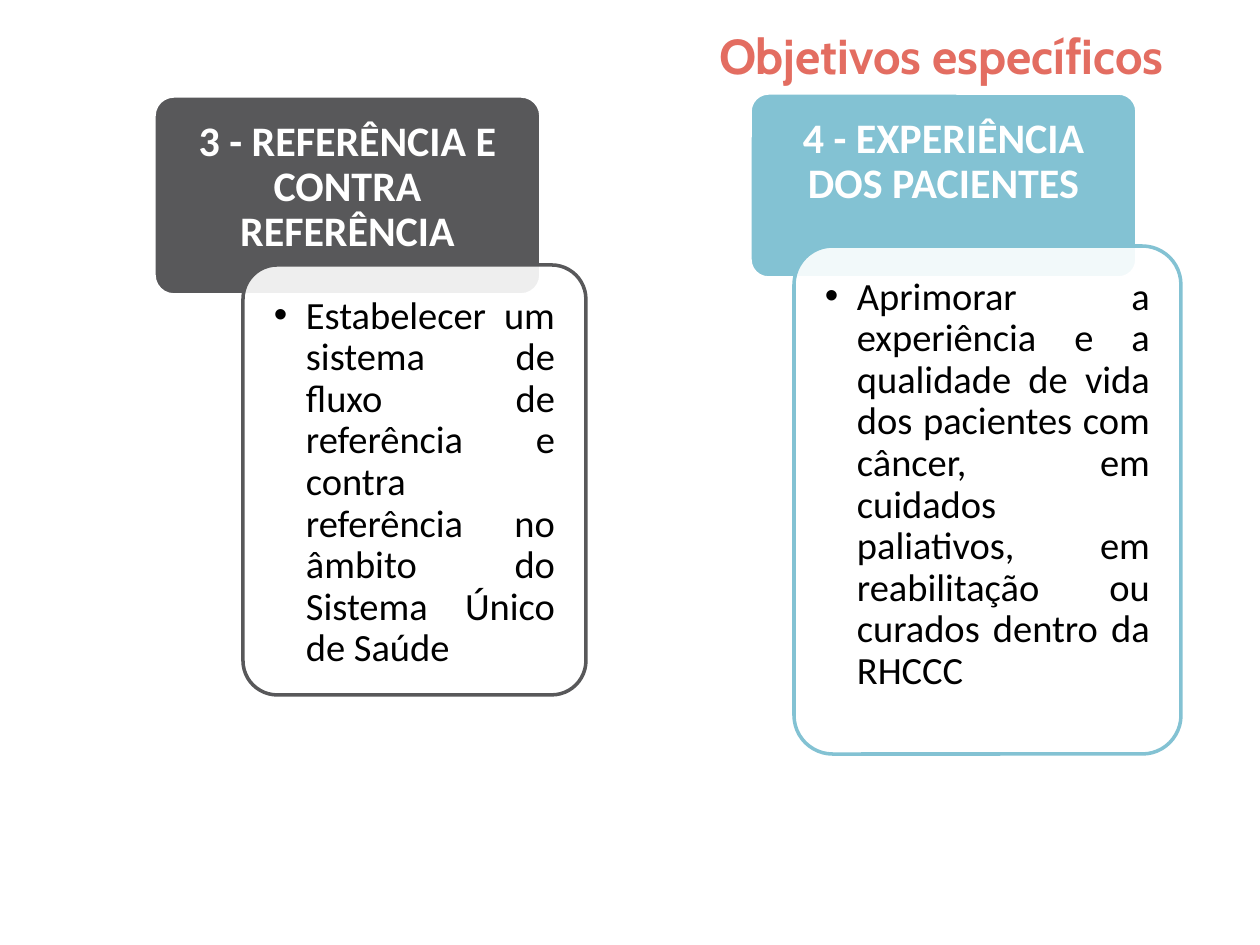
from lxml import etree
from pptx import Presentation
from pptx import util as u
from pptx.dml.color import RGBColor
from pptx.enum import shapes, text
from pptx.oxml.ns import qn

PX = 914400 / 126
HEX = {"coral": "E36D61", "gray": "58585A", "blue": "83C2D3",
       "white": "FFFFFF", "black": "000000"}
TITLE = ("Objetivos específicos", (94, -24, 1082, 158))
# boxes are left, top, width, height in px; "cap" is the height of the heading text
CARDS = [
    {"color": "gray", "head": "3 - REFERÊNCIA E CONTRA REFERÊNCIA",
     "top": (154, 96, 387, 199), "cap": 134, "low": (243, 265, 343, 430),
     "body": "Estabelecer um sistema de fluxo de referência e contra "
             "referência no âmbito do Sistema Único de Saúde"},
    {"color": "blue", "head": "4 - EXPERIÊNCIA DOS PACIENTES",
     "top": (750, 93, 387, 185), "cap": 123, "low": (794, 246, 387, 508),
     "body": "Aprimorar a experiência e a qualidade de vida dos pacientes "
             "com câncer, em cuidados paliativos, em reabilitação ou "
             "curados dentro da RHCCC"},
]
GAP = 10
BULLET = 32
FONTS = {
    "title": {"name": "Cabin", "size": u.Pt(28), "bold": True},
    "head": {"name": "Calibri", "size": u.Pt(24), "bold": True},
    "body": {"name": "Calibri", "size": u.Pt(22), "bold": False},
}
INSETS = {"head": (24, 24, 24, 12), "body": (21, 21, 21, 21)}
SIDES = ("margin_left", "margin_top", "margin_right", "margin_bottom")


def emu(*vals):
    return [u.Emu(round(v * PX)) for v in vals]


def rgb(name):
    return RGBColor.from_string(HEX[name])


def style(para, kind, color):
    for key, val in FONTS[kind].items():
        setattr(para.font, key, val)
    para.font.color.rgb = rgb(color)


def panel(slide, box, fill, line, alpha=None):
    """Rounded box; alpha is its opacity in percent."""
    shape = slide.shapes.add_shape(
        shapes.MSO_SHAPE.ROUNDED_RECTANGLE, *emu(*box))
    shape.adjustments[0] = 0.1
    shape.shadow.inherit = False
    shape.fill.solid()
    shape.fill.fore_color.rgb = rgb(fill)
    shape.line.color.rgb = rgb(line)
    shape.line.width = u.Pt(2)
    if alpha:
        tone = shape.fill._xPr.find(qn("a:solidFill"))[0]
        etree.SubElement(tone, qn("a:alpha"), val=str(alpha * 1000))


def label(slide, box, words, kind, color, align):
    frame = slide.shapes.add_textbox(*emu(*box)).text_frame
    frame.word_wrap = True
    frame.vertical_anchor = text.MSO_ANCHOR.TOP
    for side, val in zip(SIDES, emu(*INSETS[kind])):
        setattr(frame, side, val)
    para = frame.paragraphs[0]
    para.text = words
    para.alignment = align
    para.line_spacing = 0.9
    if kind == "body":
        props = para._p.get_or_add_pPr()
        dent = emu(BULLET)[0]
        props.set("marL", str(dent))
        props.set("indent", str(-dent))
        etree.SubElement(props, qn("a:buFont"), typeface="Arial")
        etree.SubElement(props, qn("a:buChar"), char="•")
    style(para, kind, color)


def card(slide, item):
    x, y, w, _ = item["top"]
    panel(slide, item["top"], item["color"], "white")
    label(slide, (x, y, w, item["cap"]), item["head"], "head", "white",
          text.PP_ALIGN.CENTER)
    x, y, w, h = item["low"]
    panel(slide, item["low"], "white", item["color"], 90)
    label(slide, (x + GAP, y + GAP, w - 2 * GAP, h - 2 * GAP), item["body"],
          "body", "black", text.PP_ALIGN.JUSTIFY)


def main():
    deck = Presentation()
    deck.slide_width, deck.slide_height = emu(1260, 945)
    slide = deck.slides.add_slide(deck.slide_layouts[5])
    title = slide.shapes.title
    words, box = TITLE
    title.left, title.top, title.width, title.height = emu(*box)
    title.text = words
    title.text_frame.vertical_anchor = text.MSO_ANCHOR.MIDDLE
    para = title.text_frame.paragraphs[0]
    para.alignment = text.PP_ALIGN.RIGHT
    style(para, "title", "coral")
    for item in CARDS:
        card(slide, item)
    deck.save("out.pptx")


if __name__ == "__main__":
    main()
